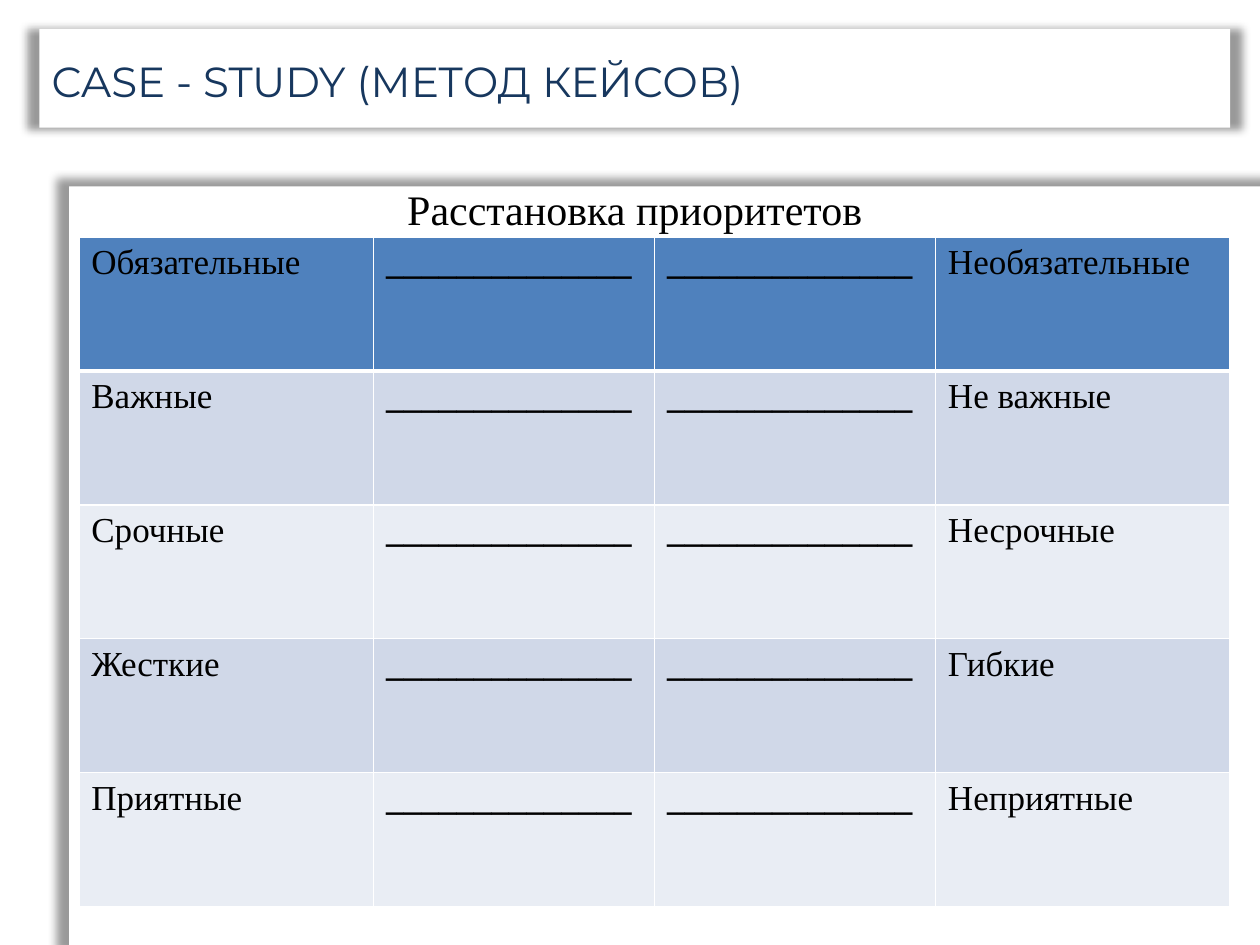
from lxml import etree
from pptx import Presentation
from pptx.dml.color import RGBColor
from pptx.enum.shapes import MSO_SHAPE
from pptx.enum.text import PP_ALIGN
from pptx.oxml import parse_xml
from pptx.oxml.ns import nsdecls, qn
from pptx.util import Pt

RECTANGLE = MSO_SHAPE.RECTANGLE
LEFT, CENTER = PP_ALIGN.LEFT, PP_ALIGN.CENTER

WHITE = RGBColor(0xFF, 0xFF, 0xFF)
BLACK = RGBColor(0x00, 0x00, 0x00)
NAVY = RGBColor(0x17, 0x37, 0x5E)
HEADER_BLUE = RGBColor(0x4F, 0x81, 0xBD)
BAND_DARK = RGBColor(0xD0, 0xD8, 0xE8)
BAND_LIGHT = RGBColor(0xE9, 0xED, 0xF4)

TITLE_FONT = "Montserrat"
BODY_FONT = "Times New Roman"
HEADING_SIZE = 24
CELL_SIZE = 20

BLANK_LINE = "_" * 14
PRIORITIES = [
    ("Обязательные", "Необязательные"),
    ("Важные", "Не важные"),
    ("Срочные", "Несрочные"),
    ("Жесткие", "Гибкие"),
    ("Приятные", "Неприятные"),
]
COLUMN_WIDTHS = [168.5, 160.5, 160.5, 168.5]
ROW_HEIGHT = 76.5


class SlideBuilder:
    """Holds the page and draws each kind of element on it."""

    def __init__(self, page):
        self.page = page

    def format_text(self, paragraph, font, size, color, bold=False):
        for span in paragraph.runs:
            span.font.name = font
            span.font.size = Pt(size)
            span.font.color.rgb = color
            span.font.bold = bold

    def panel(self, left, top, width, height):
        """White rectangle with a soft shadow slightly larger than itself."""
        box = self.page.shapes.add_shape(
            RECTANGLE, Pt(left), Pt(top), Pt(width), Pt(height))
        box.fill.solid()
        box.fill.fore_color.rgb = WHITE
        box.line.fill.background()
        box.shadow.inherit = False
        effects = box._element.spPr.find(qn("a:effectLst"))
        effects.append(parse_xml(
            f'<a:outerShdw {nsdecls("a")} blurRad="{Pt(5)}" dist="0" '
            'sx="102000" sy="102000" algn="ctr" rotWithShape="0">'
            '<a:srgbClr val="000000"><a:alpha val="40000"/></a:srgbClr>'
            '</a:outerShdw>'))

    def text(self, words, left, top, width, height, font, color, align=LEFT):
        box = self.page.shapes.add_textbox(
            Pt(left), Pt(top), Pt(width), Pt(height))
        box.text_frame.word_wrap = True
        box.text_frame.text = words
        paragraph = box.text_frame.paragraphs[0]
        paragraph.alignment = align
        self.format_text(paragraph, font, HEADING_SIZE, color)
        return paragraph

    def border(self, cell, side, width):
        properties = cell._tc.get_or_add_tcPr()
        line = etree.SubElement(properties, qn(f"a:ln{side}"), w=str(Pt(width)))
        fill = etree.SubElement(line, qn("a:solidFill"))
        etree.SubElement(fill, qn("a:srgbClr"), val=str(WHITE))

    def cell(self, cell, words, row):
        cell.text = words
        self.format_text(cell.text_frame.paragraphs[0], BODY_FONT, CELL_SIZE,
                         BLACK, bold=words == BLANK_LINE)
        # Borders come before the fill in the cell properties
        for side in "LRTB":
            under_header = (row, side) in ((0, "B"), (1, "T"))
            self.border(cell, side, 3 if under_header else 1)
        cell.fill.solid()
        if row == 0:
            cell.fill.fore_color.rgb = HEADER_BLUE
        else:
            cell.fill.fore_color.rgb = BAND_DARK if row % 2 else BAND_LIGHT

    def table(self, rows, left, top):
        table = self.page.shapes.add_table(
            len(rows), len(COLUMN_WIDTHS), Pt(left), Pt(top),
            Pt(sum(COLUMN_WIDTHS)), Pt(ROW_HEIGHT * len(rows))).table
        for column, width in zip(table.columns, COLUMN_WIDTHS):
            column.width = Pt(width)
        for row, values in enumerate(rows):
            table.rows[row].height = Pt(ROW_HEIGHT)
            for column, words in enumerate(values):
                self.cell(table.cell(row, column), words, row)


def main():
    deck = Presentation()
    deck.slide_width, deck.slide_height = Pt(720), Pt(540)
    builder = SlideBuilder(deck.slides.add_slide(deck.slide_layouts[6]))

    # Title band
    builder.panel(22.5, 16.5, 680.5, 56.5)
    title = builder.text("CASE - STUDY (МЕТОД КЕЙСОВ)", 22.5, 28, 697.5, 28,
                         TITLE_FONT, NAVY)
    indent = Pt(27)
    properties = title._p.get_or_add_pPr()
    properties.set("marL", str(indent))
    properties.set("indent", str(-indent))

    # Content panel and its heading
    builder.panel(39.5, 106.5, 680.5, 433.5)
    builder.text("Расстановка приоритетов", 28, 101.5, 669.5, 36.5,
                 BODY_FONT, BLACK, CENTER)

    # Priorities table: opposite ends of each scale with blanks between
    rows = [(first, BLANK_LINE, BLANK_LINE, last) for first, last in PRIORITIES]
    builder.table(rows, 45, 135.5)

    deck.save("out.pptx")


if __name__ == "__main__":
    main()
